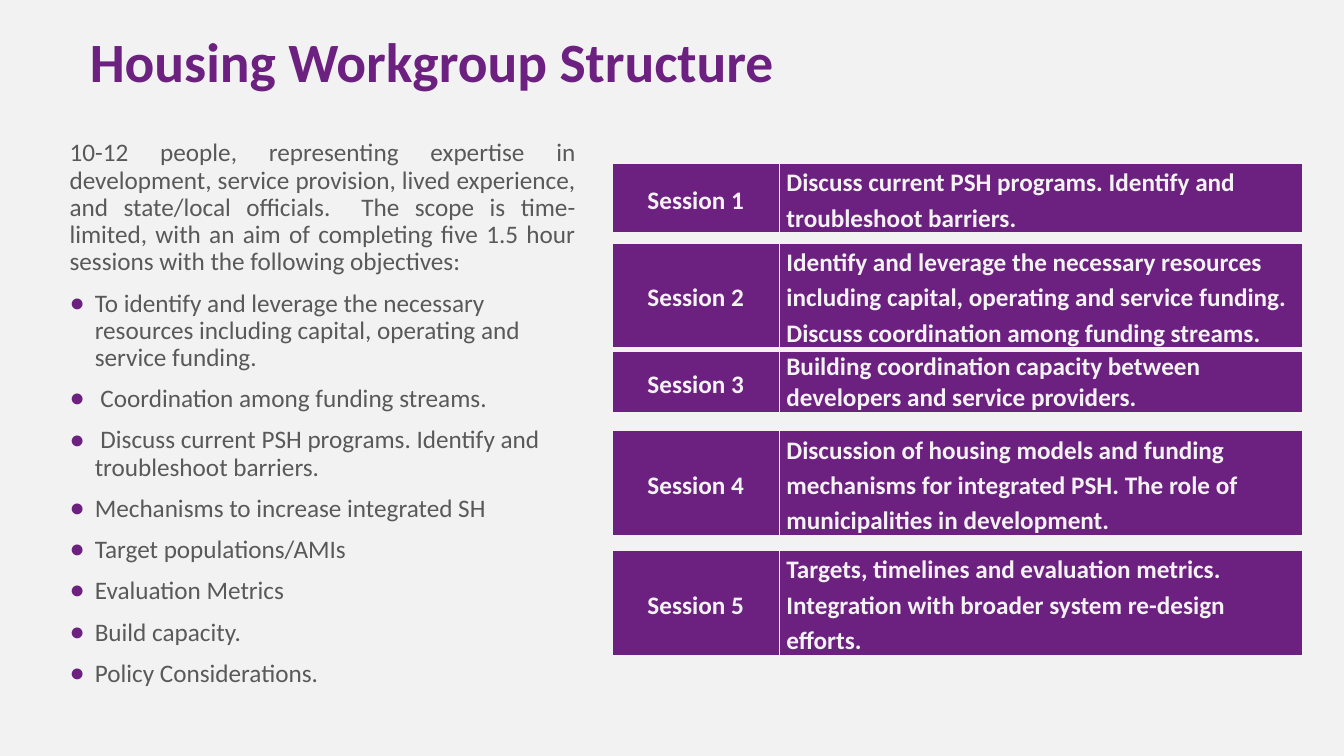
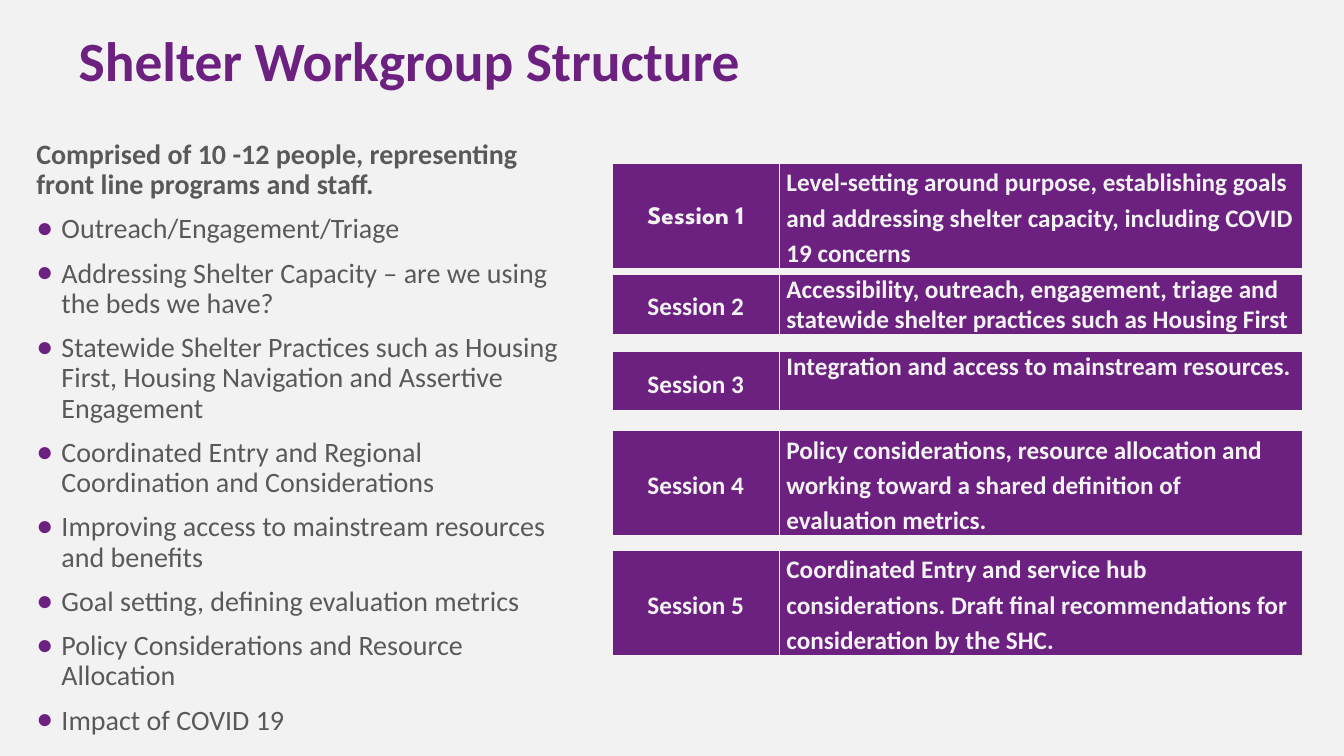
"""Build the two workgroup structure slides."""
import dataclasses

import lxml.etree
import pptx
import pptx.dml.color
import pptx.enum.text
import pptx.oxml.ns
import pptx.util

Inches = pptx.util.Inches
Pt = pptx.util.Pt
ALIGN = pptx.enum.text.PP_ALIGN
ANCHOR = pptx.enum.text.MSO_ANCHOR


@dataclasses.dataclass(frozen=True)
class Theme:
    purple: str = "6C2080"
    pale: str = "F2F2F2"
    grey: str = "595959"
    font: str = "Calibri"
    accent_font: str = "League Spartan"
    title_size: float = 39.6
    session_size: float = 18


theme = Theme()


def add_element(parent, tag, **attributes):
    return lxml.etree.SubElement(parent, pptx.oxml.ns.qn(tag), attributes)


def write(paragraph, text, color, spacing, align, **font_values):
    run = paragraph.add_run()
    run.text = text
    paragraph.line_spacing = spacing
    paragraph.alignment = align
    run.font.color.rgb = pptx.dml.color.RGBColor.from_string(color)
    for attribute, value in {"name": theme.font, "bold": False, **font_values}.items():
        setattr(run.font, attribute, value)


SHORT, MEDIUM, TALL = 0.6, 0.67, 1.01
TABLE_LEFT = 6.07
COLUMN_WIDTHS = [1.66, 5.19]
BORDERS = {"a:lnL": 1, "a:lnR": 1, "a:lnT": 1, "a:lnB": 3}

workgroups = [
    {
        "title": "Housing Workgroup Structure",
        "title_at": (0.79, 0.3),
        "objectives_at": (0.59, 5.22),
        "size": 18,
        "intro": "10-12 people, representing expertise in development, service provision, "
                 "lived experience, and state/local officials.  The scope is time-limited, "
                 "with an aim of completing five 1.5 hour sessions with the following objectives:",
        "intro_bold": False,
        "intro_align": ALIGN.JUSTIFY,
        "objectives": [
            "To identify and leverage the necessary resources including capital, "
            "operating and service funding.",
            " Coordination among funding streams.",
            " Discuss current PSH programs. Identify and troubleshoot barriers.",
            "Mechanisms to increase integrated SH",
            "Target populations/AMIs",
            "Evaluation Metrics",
            "Build capacity.",
            "Policy Considerations.",
        ],
        "first_label_font": theme.font,
        "sessions": [
            (1.62, MEDIUM, "Discuss current PSH programs. Identify and troubleshoot barriers."),
            (2.41, TALL, "Identify and leverage the necessary resources including capital, "
                         "operating and service funding. Discuss coordination among funding "
                         "streams."),
            (3.49, SHORT, "Building coordination capacity between developers and service "
                          "providers."),
            (4.27, TALL, "Discussion of housing models and funding mechanisms for integrated "
                         "PSH. The role of municipalities in development."),
            (5.46, TALL, "Targets, timelines and evaluation metrics. Integration with broader "
                         "system re-design efforts."),
        ],
    },
    {
        "title": "Shelter Workgroup Structure",
        "title_at": (0.68, 0.29),
        "objectives_at": (0.26, 5.54),
        "size": 20,
        "intro": "Comprised of 10 -12 people, representing front line programs and staff.",
        "intro_bold": True,
        "intro_align": ALIGN.LEFT,
        "objectives": [
            "Outreach/Engagement/Triage",
            "Addressing Shelter Capacity – are we using the beds we have?",
            "Statewide Shelter Practices such as Housing First, Housing Navigation and "
            "Assertive Engagement",
            "Coordinated Entry and Regional Coordination and Considerations",
            "Improving access to mainstream resources and benefits",
            "Goal setting, defining evaluation metrics",
            "Policy Considerations and Resource Allocation",
            "Impact of COVID 19",
        ],
        "first_label_font": theme.accent_font,
        "sessions": [
            (1.62, TALL, "Level-setting around purpose, establishing goals and addressing "
                         "shelter capacity, including COVID 19 concerns"),
            (2.72, SHORT, "Accessibility, outreach, engagement, triage and statewide shelter "
                          "practices such as Housing First"),
            (3.49, SHORT, "Integration and access to mainstream resources."),
            (4.27, TALL, "Policy considerations, resource allocation and working toward a "
                         "shared definition of evaluation metrics."),
            (5.46, TALL, "Coordinated Entry and service hub considerations. Draft final "
                         "recommendations for consideration by the SHC."),
        ],
    },
]

deck = pptx.Presentation()
deck.slide_width, deck.slide_height = Inches(13.33), Inches(7.5)
backdrop = deck.slide_master.background.fill
backdrop.solid()
backdrop.fore_color.rgb = pptx.dml.color.RGBColor.from_string(theme.pale)

for workgroup in workgroups:
    slide = deck.slides.add_slide(deck.slide_layouts[1])
    title, objectives = slide.placeholders
    title_left, title_top = workgroup["title_at"]
    objectives_left, objectives_width = workgroup["objectives_at"]
    for holder, anchor, box in [
        (title, ANCHOR.MIDDLE, (title_left, title_top, 11.5, 0.69)),
        (objectives, ANCHOR.TOP, (objectives_left, 1.34, objectives_width, 4.91)),
    ]:
        holder.left, holder.top, holder.width, holder.height = map(Inches, box)
        holder.text_frame.vertical_anchor = anchor
        holder.text_frame.word_wrap = True
        holder.text_frame.auto_size = pptx.enum.text.MSO_AUTO_SIZE.NONE

    write(title.text_frame.paragraphs[0], workgroup["title"], theme.purple, 0.9,
          ALIGN.LEFT, size=Pt(theme.title_size), bold=True)

    intro = objectives.text_frame.paragraphs[0]
    intro_format = intro._p.get_or_add_pPr()
    intro_format.set("marL", "0")
    intro_format.set("indent", "0")
    add_element(intro_format, "a:buNone")
    intro.space_before = Pt(0)
    write(intro, workgroup["intro"], theme.grey, 0.9, workgroup["intro_align"],
          size=Pt(workgroup["size"]), bold=workgroup["intro_bold"])

    for objective in workgroup["objectives"]:
        item = objectives.text_frame.add_paragraph()
        item_format = item._p.get_or_add_pPr()
        item_format.set("marL", str(Inches(0.25)))
        item_format.set("indent", str(-Inches(0.25)))
        add_element(add_element(item_format, "a:buClr"), "a:srgbClr", val=theme.purple)
        add_element(item_format, "a:buChar", char="●")
        item.space_before = Pt(10)
        write(item, objective, theme.grey, 0.9, ALIGN.LEFT, size=Pt(workgroup["size"]))

    for number, (top, height, topic) in enumerate(workgroup["sessions"], 1):
        session = slide.shapes.add_table(
            1, 2, Inches(TABLE_LEFT), Inches(top),
            Inches(sum(COLUMN_WIDTHS)), Inches(height)).table
        session.first_row = session.horz_banding = False
        label_font = workgroup["first_label_font"] if number == 1 else theme.font
        topic_spacing = 1.0 if height == SHORT else 1.15
        contents = [
            (f"Session {number}", label_font, 1.15, ALIGN.CENTER, ANCHOR.MIDDLE),
            (topic, theme.font, topic_spacing, ALIGN.LEFT, ANCHOR.TOP),
        ]
        for column, (text, font, spacing, align, anchor) in enumerate(contents):
            session.columns[column].width = Inches(COLUMN_WIDTHS[column])
            cell = session.cell(0, column)
            cell_format = {
                "margin_left": Inches(0.07), "margin_right": Inches(0.07),
                "margin_top": 0, "margin_bottom": 0, "vertical_anchor": anchor,
            }
            for attribute, value in cell_format.items():
                setattr(cell, attribute, value)
            for side, width in BORDERS.items():
                border = add_element(cell._tc.get_or_add_tcPr(), side, w=str(Pt(width)))
                add_element(add_element(border, "a:solidFill"), "a:srgbClr", val=theme.pale)
            cell.fill.solid()
            cell.fill.fore_color.rgb = pptx.dml.color.RGBColor.from_string(theme.purple)
            write(cell.text_frame.paragraphs[0], text, theme.pale, spacing, align,
                  name=font, size=Pt(theme.session_size), bold=True)

deck.save("out.pptx")
